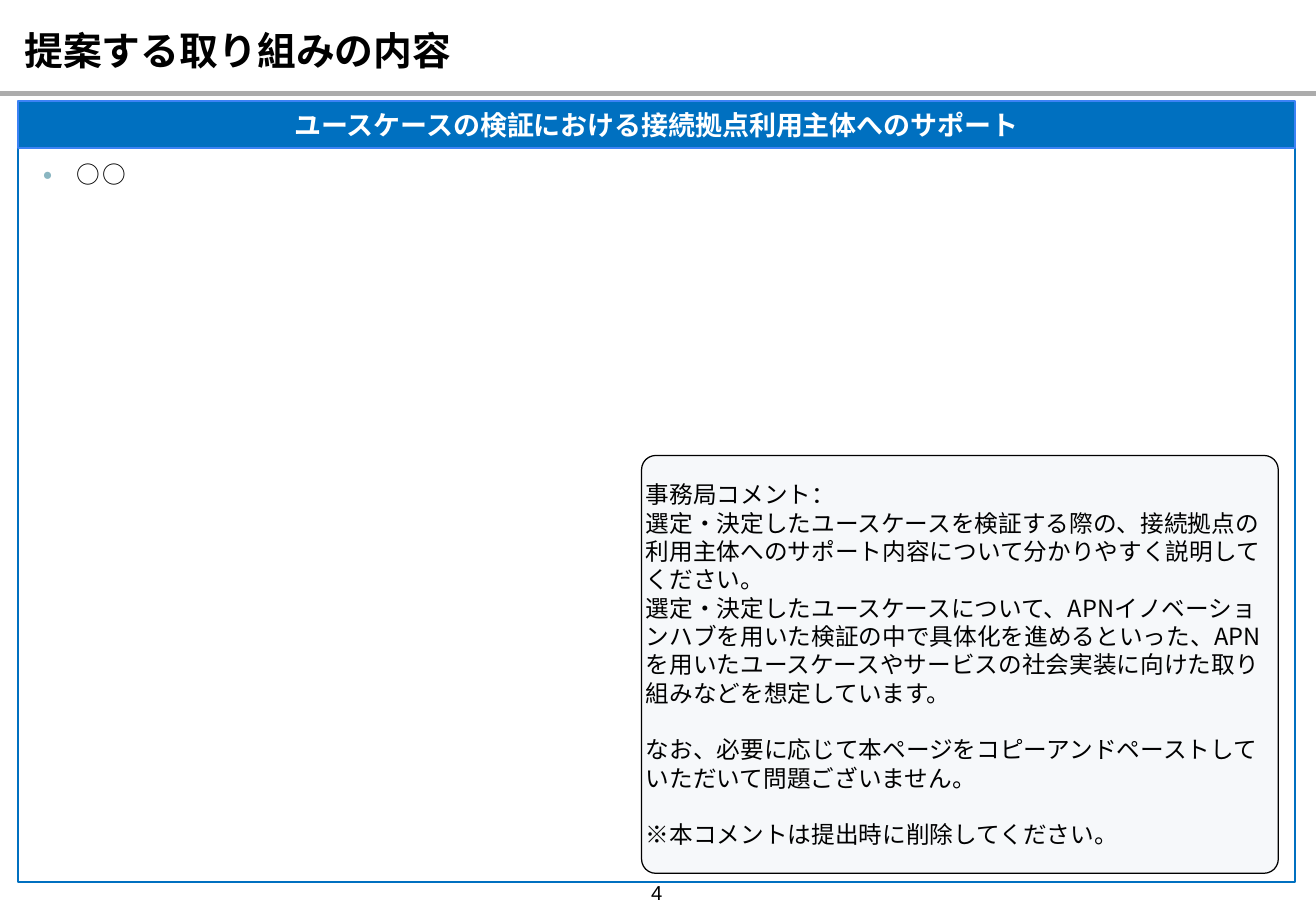
from lxml import etree
from pptx import Presentation
from pptx.dml.color import RGBColor
from pptx.enum.shapes import MSO_CONNECTOR, MSO_SHAPE
from pptx.enum.text import MSO_ANCHOR, PP_ALIGN
from pptx.oxml.ns import qn
from pptx.util import Pt

PX = 9144  # 100 px to the inch
RECT, ROUNDED = MSO_SHAPE.RECTANGLE, MSO_SHAPE.ROUNDED_RECTANGLE
TOP, MIDDLE = MSO_ANCHOR.TOP, MSO_ANCHOR.MIDDLE
LEFT, CENTER = PP_ALIGN.LEFT, PP_ALIGN.CENTER

THEME = {
    "latin": "Arial", "japanese": "Noto Sans CJK JP",
    "black": "000000", "white": "FFFFFF", "rule": "ACACAC",
    "blue": "0070C0", "banner_line": "3C82F5",
    "comment_fill": "F6F8FA", "bullet": "8AB6C1",
    "title": 23, "banner": 16, "body": 14, "number": 12,
    "comment_pitch": 16.8,
}


def rgb(name):
    return RGBColor.from_string(THEME[name])


def write(box, text, size="body", color="black", font="japanese", bold=False,
          align=LEFT, anchor=MIDDLE, insets=(0, 0, 0, 0), pitch=None, gaps=()):
    """Fill a box; a newline starts a paragraph, \\v breaks a line inside one."""
    frame = box.text_frame
    frame.word_wrap = True
    frame.vertical_anchor = anchor
    (frame.margin_left, frame.margin_top,
     frame.margin_right, frame.margin_bottom) = [inset * PX for inset in insets]
    for index, content in enumerate(text.split("\n")):
        para = frame.add_paragraph() if index else frame.paragraphs[0]
        para.text = content
        para.alignment = align
        if pitch:
            para.line_spacing = Pt(pitch)
        if index in gaps:
            para.space_before = Pt(pitch)
        for span in para.runs:
            span.font.size = Pt(THEME[size])
            span.font.bold = bold
            span.font.name = THEME[font]
            span.font.color.rgb = rgb(color)
            east_asian = etree.Element(qn("a:ea"), typeface=THEME["japanese"])
            span.font._element.find(qn("a:latin")).addnext(east_asian)
    return frame.paragraphs[0]


deck = Presentation()
deck.slide_width, deck.slide_height = 1083 * PX, 750 * PX
page = deck.slides.add_slide(deck.slide_layouts[6])

# Page number
number = page.shapes.add_textbox(515 * PX, 721 * PX, 51 * PX, 28 * PX)
write(number, "4", size="number", font="latin", align=CENTER,
      insets=(10, 5, 10, 5))

# Title and the rule below it
rule = page.shapes.add_connector(MSO_CONNECTOR.STRAIGHT, 0, 77 * PX, 1083 * PX, 77 * PX)
rule.line.color.rgb = rgb("rule")
rule.line.width = Pt(3)
etree.SubElement(rule._element.spPr, qn("a:effectLst"))

title = page.shapes.add_textbox(0, 8 * PX, 1083 * PX, 66 * PX)
write(title, "提案する取り組みの内容", size="title", font="latin", bold=True,
      insets=(20, 5, 10, 5))

# Body panel, banner and comment box
panels = []
for kind, left, top, width, height, fill, line, weight in (
    (RECT, 15, 112, 1051, 614, "white", "blue", 1),
    (RECT, 15, 83, 1051, 39, "blue", "banner_line", 1),
    (ROUNDED, 528, 375, 524, 344, "comment_fill", "black", 0.75),
):
    panel = page.shapes.add_shape(kind, left * PX, top * PX, width * PX, height * PX)
    panel.shadow.inherit = False
    panel.fill.solid()
    panel.fill.fore_color.rgb = rgb(fill)
    panel.line.color.rgb = rgb(line)
    panel.line.width = Pt(weight)
    panels.append(panel)
body, banner, comment = panels
comment.adjustments[0] = 0.034

# Bulleted body text
item = write(body, "○○", anchor=TOP, insets=(20, 20, 20, 20))
item.space_after = Pt(12)
item.runs[0].font._element.set("spc", "130")
props = item._p.get_or_add_pPr()
props.set("marL", str(28 * PX))
props.set("indent", str(-28 * PX))
bullet_color = etree.SubElement(props, qn("a:buClr"))
etree.SubElement(bullet_color, qn("a:srgbClr"), val=THEME["bullet"])
etree.SubElement(props, qn("a:buSzPct"), val="70000")
etree.SubElement(props, qn("a:buFont"), typeface=THEME["latin"])
etree.SubElement(props, qn("a:buChar"), char="●")

# Banner text
write(banner, "ユースケースの検証における接続拠点利用主体へのサポート",
      size="banner", color="white", bold=True, align=CENTER)

# Comment text, with one line of space before the last two paragraphs
write(comment,
      "事務局コメント：\v"
      "選定・決定したユースケースを検証する際の、接続拠点の利用主体への"
      "サポート内容について分かりやすく説明してください。\n"
      "選定・決定したユースケースについて、APNイノベーションハブを用いた"
      "検証の中で具体化を進めるといった、APNを用いたユースケースやサービスの"
      "社会実装に向けた取り組みなどを想定しています。\n"
      "なお、必要に応じて本ページをコピーアンドペーストして"
      "いただいて問題ございません。\n"
      "※本コメントは提出時に削除してください。",
      pitch=THEME["comment_pitch"], gaps=(2, 3))

deck.save("out.pptx")
